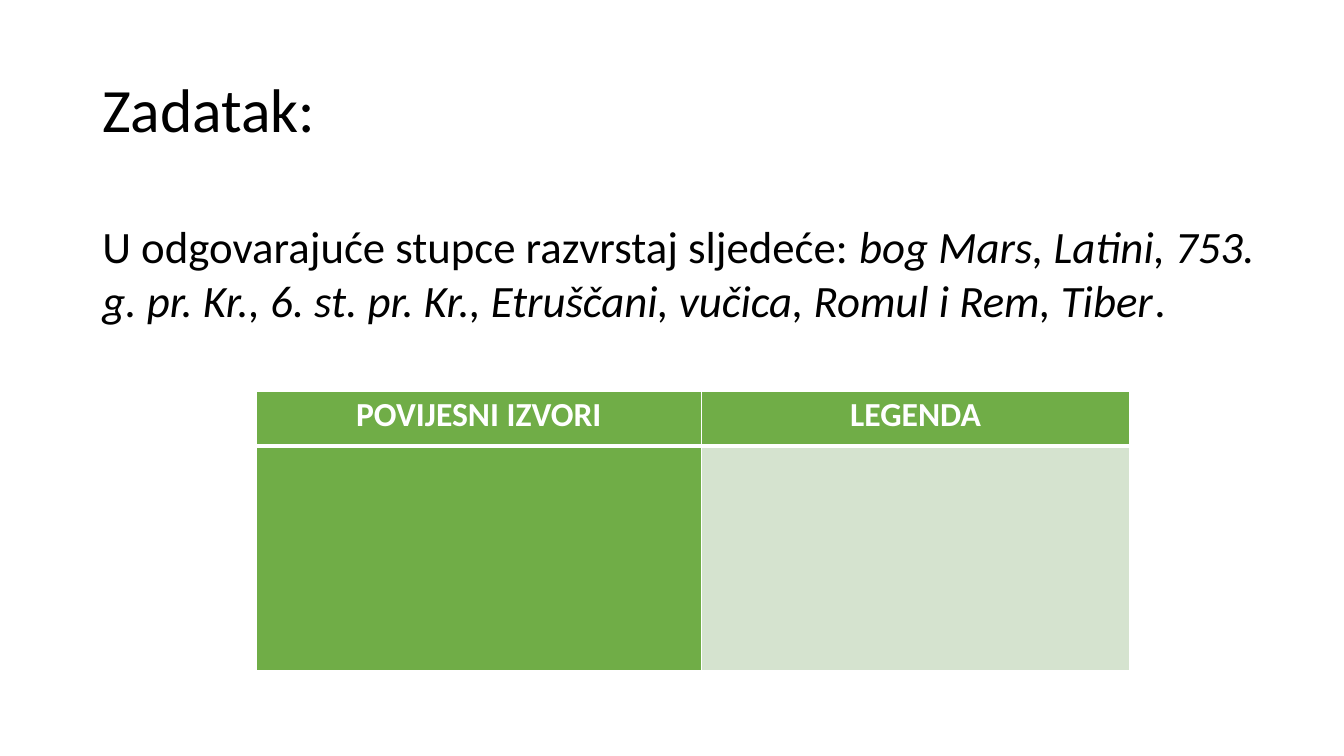
from lxml import etree
from pptx import Presentation
from pptx import util as u
from pptx.dml.color import RGBColor
from pptx.enum import text
from pptx.oxml.ns import qn

PX = 9525  # EMU per px, 96 px to the inch
FONT = "Calibri"
BLACK, WHITE, GREEN, PALE = "000000", "FFFFFF", "70AD47", "D5E3CF"

SLIDE_SIZE = (1280, 720)
TITLE = [("Zadatak:", False)]
TITLE_BOX = (88, 38, 1104, 139)
TASK = [
    ("U odgovarajuće stupce razvrstaj sljedeće: ", False),
    ("bog Mars, Latini, 753. g. pr. Kr., 6. st. pr. Kr., Etruščani, vučica, "
     "Romul i Rem, Tiber", True),
    (".", False),
]
TASK_BOX = (88, 204, 1136, 142)
TABLE_ORIGIN = (244, 373)
COLUMN_WIDTHS = (424, 408)
ROW_HEIGHTS = (52, 214)
TABLE_ROWS = [
    [("POVIJESNI IZVORI", GREEN), ("LEGENDA", GREEN)],
    [("", GREEN), ("", PALE)],
]


def px(length):
    return u.Emu(length * PX)


def color(value):
    return RGBColor.from_string(value)


def style(paragraph, size, value, bold=False):
    font = paragraph.font
    font.name, font.size, font.bold = FONT, u.Pt(size), bold
    font.color.rgb = color(value)


def add_text(slide, box, runs, size, anchor, spacing):
    frame = slide.shapes.add_textbox(*map(px, box)).text_frame
    frame.word_wrap = True
    frame.vertical_anchor = anchor
    paragraph = frame.paragraphs[0]
    paragraph.line_spacing = spacing
    style(paragraph, size, BLACK)
    for words, italic in runs:
        run = paragraph.add_run()
        run.text = words
        if italic:
            run.font.italic = True


def set_borders(cell, top, bottom):
    """Draw white cell borders; top and bottom widths are in points."""
    properties = cell._tc.get_or_add_tcPr()
    widths = {"a:lnL": 1, "a:lnR": 1, "a:lnT": top, "a:lnB": bottom}
    for position, (tag, width) in enumerate(widths.items()):
        line = etree.Element(qn(tag), w=str(u.Pt(width)))
        fill = etree.SubElement(line, qn("a:solidFill"))
        etree.SubElement(fill, qn("a:srgbClr"), val=WHITE)
        properties.insert(position, line)


def add_table(slide):
    size = (sum(COLUMN_WIDTHS), sum(ROW_HEIGHTS))
    table = slide.shapes.add_table(
        len(ROW_HEIGHTS), len(COLUMN_WIDTHS), *map(px, TABLE_ORIGIN + size)).table
    for column, width in zip(table.columns, COLUMN_WIDTHS):
        column.width = px(width)
    for row, height, contents in zip(table.rows, ROW_HEIGHTS, TABLE_ROWS):
        row.height = px(height)
        header = contents is TABLE_ROWS[0]
        for cell, (words, fill) in zip(row.cells, contents):
            cell.fill.solid()
            cell.fill.fore_color.rgb = color(fill)
            cell.margin_left = cell.margin_right = px(7)
            cell.margin_top = cell.margin_bottom = 0
            set_borders(cell, top=1 if header else 3, bottom=3 if header else 1)
            if words:
                cell.text = words
                paragraph = cell.text_frame.paragraphs[0]
                paragraph.alignment = text.PP_ALIGN.CENTER
                paragraph.line_spacing = 1.07
                style(paragraph, 24, WHITE, bold=True)


def main():
    presentation = Presentation()
    presentation.slide_width, presentation.slide_height = map(px, SLIDE_SIZE)
    slide = presentation.slides.add_slide(presentation.slide_layouts[6])
    add_text(slide, TITLE_BOX, TITLE, 44, text.MSO_ANCHOR.MIDDLE, 0.9)
    add_table(slide)
    add_text(slide, TASK_BOX, TASK, 32, text.MSO_ANCHOR.TOP, 1.0)
    presentation.save("out.pptx")


if __name__ == "__main__":
    main()
